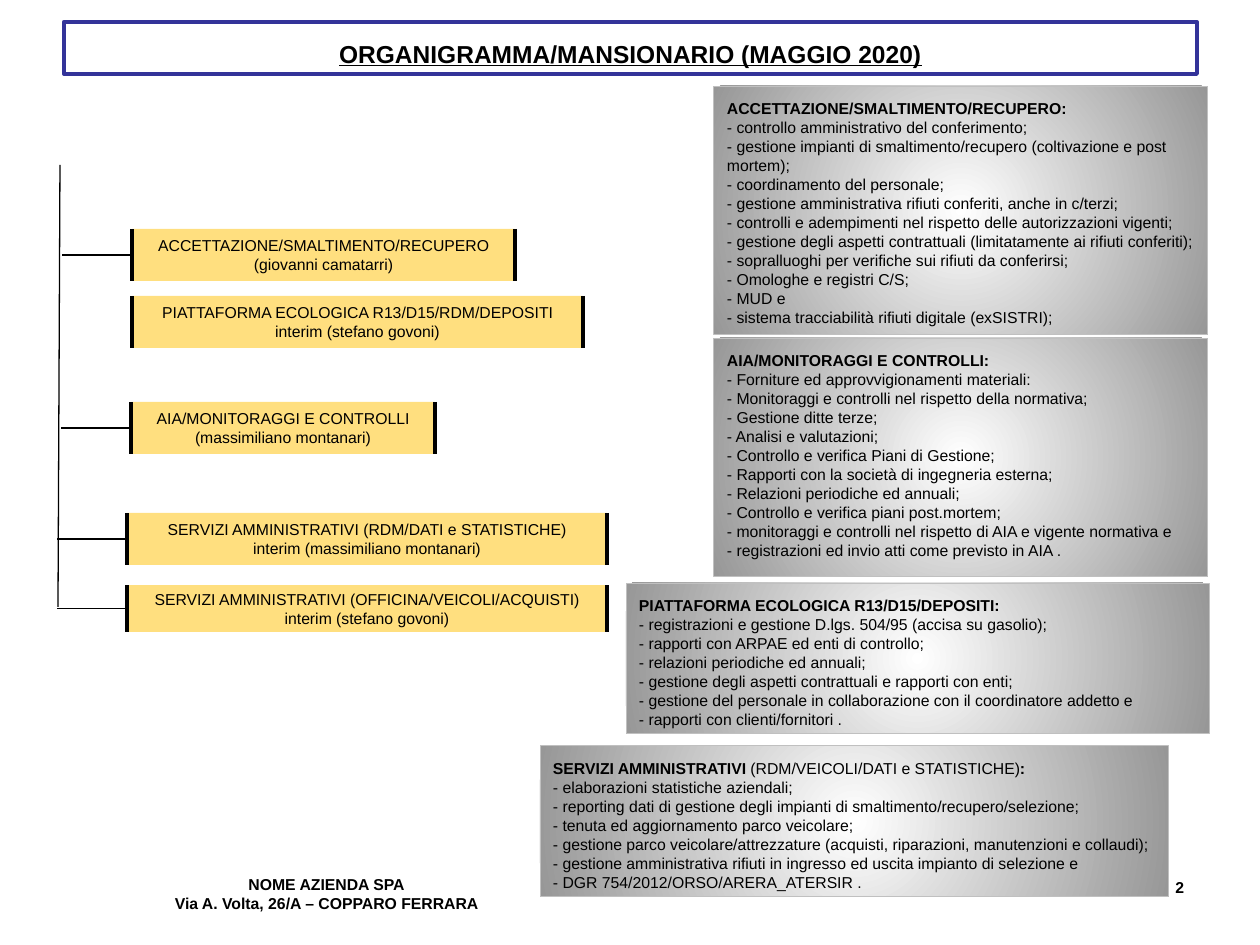
from dataclasses import dataclass

from lxml import etree
from pptx import Presentation
from pptx.dml.color import RGBColor
from pptx.enum.shapes import MSO_CONNECTOR, MSO_SHAPE as SHAPE
from pptx.enum.text import MSO_ANCHOR as ANCHOR, PP_ALIGN as ALIGN
from pptx.oxml import parse_xml
from pptx.oxml.ns import nsdecls, qn
from pptx.util import Pt


@dataclass(frozen=True)
class Theme:
    font: str = "Arial"
    title_pt: float = 14
    body_pt: float = 9
    ink: str = "000000"
    frame: str = "333399"
    role: str = "FFC000"
    panel_mid: str = "FFFFFF"
    panel_edge: str = "979797"
    panel_line: str = "C0C0C0"


THEME = Theme()
BRANCH = 70  # length of each branch, from the trunk to its role box

TITLE = "ORGANIGRAMMA/MANSIONARIO (MAGGIO 2020)"
FOOTER = ["NOME AZIENDA SPA", "Via A. Volta, 26/A – COPPARO FERRARA"]

# box, lines, has a branch to the trunk
ROLES = [
    ((132, 229, 383, 52), ["ACCETTAZIONE/SMALTIMENTO/RECUPERO", "(giovanni camatarri)"], True),
    ((132, 296, 451, 52), ["PIATTAFORMA ECOLOGICA R13/D15/RDM/DEPOSITI", "interim (stefano govoni)"], False),
    ((131, 402, 304, 52), ["AIA/MONITORAGGI E CONTROLLI", "(massimiliano montanari)"], True),
    ((127, 513, 480, 52), ["SERVIZI AMMINISTRATIVI (RDM/DATI e STATISTICHE)", "interim (massimiliano montanari)"], True),
    ((127, 585, 480, 47), ["SERVIZI AMMINISTRATIVI (OFFICINA/VEICOLI/ACQUISTI)", "interim (stefano govoni)"], True),
]

# box, heading runs (bold and regular in turn), duties
PANELS = [
    ((714, 86, 494, 249), ["ACCETTAZIONE/SMALTIMENTO/RECUPERO:"], [
        "controllo amministrativo del conferimento;",
        "gestione impianti di smaltimento/recupero (coltivazione e post mortem);",
        "coordinamento del personale;",
        "gestione amministrativa rifiuti conferiti, anche in c/terzi;",
        "controlli e adempimenti nel rispetto delle autorizzazioni vigenti;",
        "gestione degli aspetti contrattuali (limitatamente ai rifiuti conferiti);",
        "sopralluoghi per verifiche sui rifiuti da conferirsi;",
        "Omologhe e registri C/S;",
        "MUD e",
        "sistema tracciabilità rifiuti digitale (exSISTRI);",
    ]),
    ((714, 338, 494, 239), ["AIA/MONITORAGGI E CONTROLLI:"], [
        "Forniture ed approvvigionamenti materiali:",
        "Monitoraggi e controlli nel rispetto della normativa;",
        "Gestione ditte terze;",
        "Analisi e valutazioni;",
        "Controllo e verifica Piani di Gestione;",
        "Rapporti con la società di ingegneria esterna;",
        "Relazioni periodiche ed annuali;",
        "Controllo e verifica piani post.mortem;",
        "monitoraggi e controlli nel rispetto di AIA e vigente normativa e",
        "registrazioni ed invio atti come previsto in AIA .",
    ]),
    ((626, 583, 583, 151), ["PIATTAFORMA ECOLOGICA R13/D15/DEPOSITI:"], [
        "registrazioni e gestione D.lgs. 504/95 (accisa su gasolio);",
        "rapporti con ARPAE ed enti di controllo;",
        "relazioni periodiche ed annuali;",
        "gestione degli aspetti contrattuali e rapporti con enti;",
        "gestione del personale in collaborazione con il coordinatore addetto e",
        "rapporti con clienti/fornitori .",
    ]),
    ((540, 746, 629, 151), ["SERVIZI AMMINISTRATIVI ", "(RDM/VEICOLI/DATI e STATISTICHE)", ":"], [
        "elaborazioni statistiche aziendali;",
        "reporting dati di gestione degli impianti di smaltimento/recupero/selezione;",
        "tenuta ed aggiornamento parco veicolare;",
        "gestione parco veicolare/attrezzature (acquisti, riparazioni, manutenzioni e collaudi);",
        "gestione amministrativa rifiuti in ingresso ed uscita impianto di selezione e",
        "DGR 754/2012/ORSO/ARERA_ATERSIR .",
    ]),
]


def px(n):
    return round(n * 914400 / 126)


def rgb(value):
    return RGBColor.from_string(value)


def write(sp, paras, align, anchor=ANCHOR.TOP, inset=(13, 6), wrap=True, size=THEME.body_pt, **font):
    """Fill sp with paragraphs, each a list of (text, bold) runs."""
    tf = sp.text_frame
    dx, dy = map(px, inset)
    frame = dict(word_wrap=wrap, vertical_anchor=anchor, margin_left=dx,
                 margin_right=dx, margin_top=dy, margin_bottom=dy)
    for name, value in frame.items():
        setattr(tf, name, value)
    for i, runs in enumerate(paras):
        p = tf.add_paragraph() if i else tf.paragraphs[0]
        p.alignment = align
        for text, bold in runs:
            r = p.add_run()
            r.text = text
            for name, value in dict(name=THEME.font, size=Pt(size), bold=bold, **font).items():
                setattr(r.font, name, value)
            r.font.color.rgb = rgb(THEME.ink)


def add_box(s, kind, box, line, width):
    sp = s.shapes.add_shape(kind, *map(px, box))
    sp.shadow.inherit = False
    sp.line.color.rgb = rgb(line)
    sp.line.width = Pt(width)
    return sp


def add_line(s, x1, y1, x2, y2):
    cx = s.shapes.add_connector(MSO_CONNECTOR.STRAIGHT, *map(px, (x1, y1, x2, y2)))
    cx.line.color.rgb = rgb(THEME.ink)
    cx.line.width = Pt(0.75)
    etree.SubElement(cx._element.spPr, qn("a:effectLst"))
    return cx


def add_title(s, box):
    sp = add_box(s, SHAPE.RECTANGLE, box, THEME.frame, 2.25)
    sp.fill.background()
    write(sp, [[(TITLE, True)]], ALIGN.CENTER, ANCHOR.BOTTOM, size=THEME.title_pt, underline=True)


def add_label(s, box, lines, align):
    sp = s.shapes.add_textbox(*map(px, box))
    write(sp, [[(line, True)] for line in lines], align)


def add_panel(s, box, heading, duties):
    sp = add_box(s, SHAPE.RECTANGLE, box, THEME.panel_line, 0.5)
    sp.fill.background()
    spPr = sp._element.spPr
    spPr.replace(spPr.find(qn("a:noFill")), parse_xml(
        f'<a:gradFill {nsdecls("a")} rotWithShape="1"><a:gsLst>'
        f'<a:gs pos="0"><a:srgbClr val="{THEME.panel_mid}"/></a:gs>'
        f'<a:gs pos="100000"><a:srgbClr val="{THEME.panel_edge}"/></a:gs></a:gsLst>'
        '<a:path path="circle"><a:fillToRect l="50000" t="50000" r="50000" b="50000"/>'
        '</a:path></a:gradFill>'))
    head = [(text, i % 2 == 0) for i, text in enumerate(heading)]
    write(sp, [head] + [[(f"- {duty}", False)] for duty in duties], ALIGN.LEFT, inset=(13, 13))


def add_role(s, box, lines, branch):
    sp = add_box(s, SHAPE.DOUBLE_BRACKET, box, THEME.ink, 2.25)
    sp.adjustments[0] = 0
    sp.fill.solid()
    sp.fill.fore_color.rgb = rgb(THEME.role)
    color = sp._element.spPr.find(qn("a:solidFill"))[0]
    etree.SubElement(color, qn("a:alpha"), val="50000")
    write(sp, [[(line, False)] for line in lines], ALIGN.CENTER, ANCHOR.MIDDLE, (5, 3), wrap=False)
    if branch:
        x, y, _, h = box
        mid = y + h / 2
        add_line(s, x, mid, x - BRANCH, mid).begin_connect(sp, 1)


def main():
    prs = Presentation()
    prs.slide_width, prs.slide_height = px(1260), px(945)
    s = prs.slides.add_slide(prs.slide_layouts[6])
    add_title(s, (64, 22, 1133, 52))
    add_label(s, (127, 869, 399, 54), FOOTER, ALIGN.CENTER)
    add_label(s, (903, 872, 294, 54), ["2"], ALIGN.RIGHT)
    for panel in PANELS:
        add_panel(s, *panel)
    for role in ROLES:
        add_role(s, *role)
    add_line(s, 60, 165, 58, 607)
    prs.save("out.pptx")


if __name__ == "__main__":
    main()
